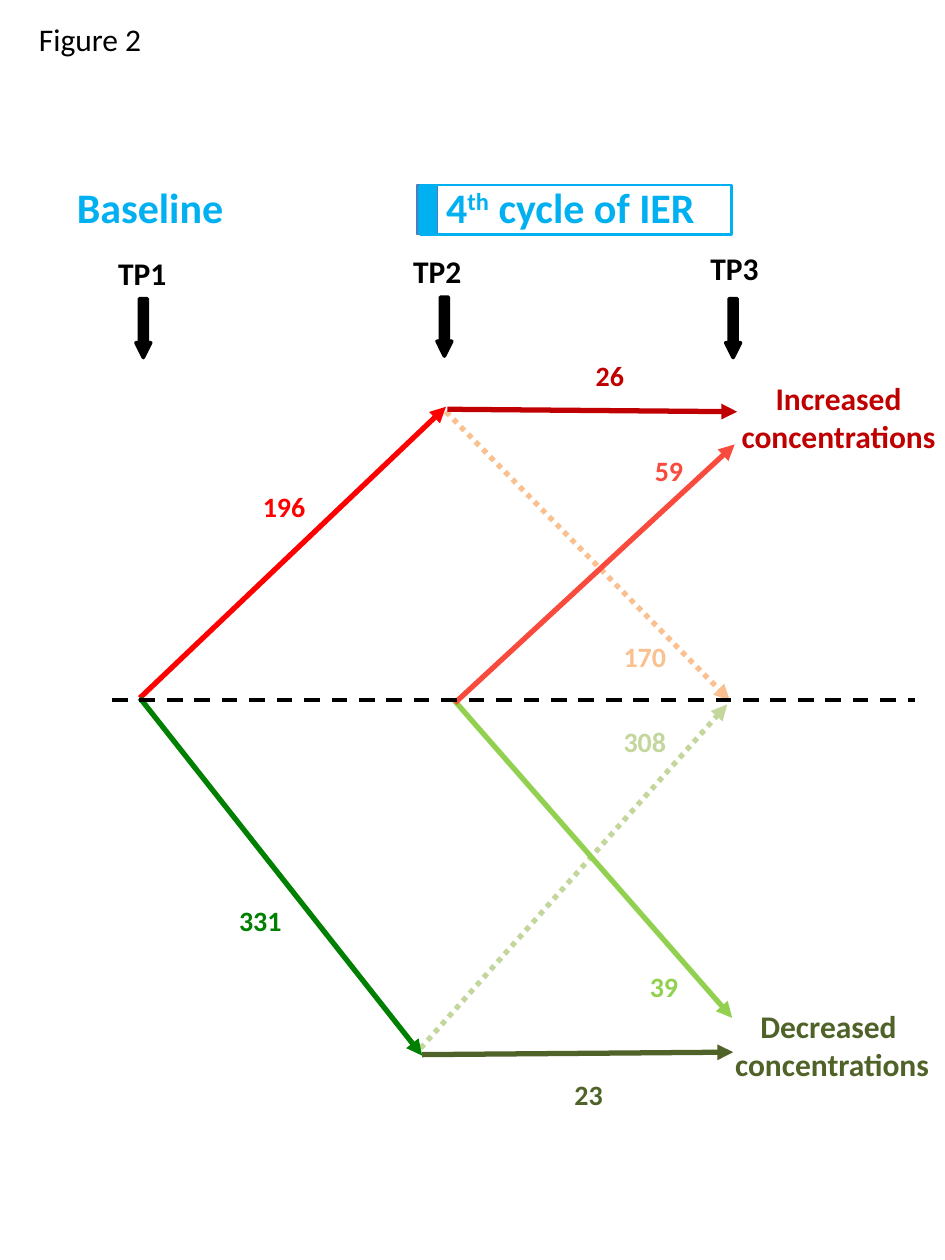
from collections import namedtuple

from lxml import etree
from pptx import Presentation
from pptx.dml.color import RGBColor
from pptx.enum import dml, shapes, text
from pptx.oxml import ns
from pptx.util import Cm, Pt

Box = namedtuple("Box", "left top")  # region origin, in cm
FONT = "Calibri"
COLORS = {
    "black": "000000",
    "sky": "00B0F0",
    "blue": "4B7EBC",
    "red": "FF0000",
    "dark red": "C00000",
    "coral": "F84B3E",
    "peach": "FAC090",
    "green": "008000",
    "olive": "4F6228",
    "lime": "92D050",
    "sage": "C3D69B",
}


def rgb(color):
    return RGBColor.from_string(COLORS[color])


def style_font(font, size, color, bold=True):
    font.name, font.size, font.bold = FONT, Pt(size), bold
    font.color.rgb = rgb(color)


def add_label(slide, box, x, y, width, height, lines, size, color,
              centred=False, wrap=False):
    label = slide.shapes.add_textbox(
        Cm(box.left + x), Cm(box.top + y), Cm(width), Cm(height))
    frame = label.text_frame
    frame.word_wrap = wrap
    frame.auto_size = text.MSO_AUTO_SIZE.SHAPE_TO_FIT_TEXT
    frame.text = lines
    for paragraph in frame.paragraphs:
        style_font(paragraph.font, size, color)
        if centred:
            paragraph.alignment = text.PP_ALIGN.CENTER
    return frame


def add_line(slide, box, start, end, color, width, dash=None, arrow=False):
    line = slide.shapes.add_connector(
        shapes.MSO_CONNECTOR.STRAIGHT,
        Cm(box.left + start[0]), Cm(box.top + start[1]),
        Cm(box.left + end[0]), Cm(box.top + end[1]))
    line.line.color.rgb = rgb(color)
    line.line.width = Pt(width)
    if dash:
        line.line.dash_style = dash
    if arrow:
        outline = line.line._get_or_add_ln()
        etree.SubElement(outline, ns.qn("a:tailEnd"), type="triangle")
    etree.SubElement(line._element.spPr, ns.qn("a:effectLst"))


def add_frame(slide, box, x, width, color, line_width, fill=None):
    frame = slide.shapes.add_shape(
        shapes.MSO_SHAPE.RECTANGLE,
        Cm(box.left + x), Cm(box.top + 0.2), Cm(width), Cm(1))
    frame.shadow.inherit = False
    frame.line.color.rgb = rgb(color)
    frame.line.width = Pt(line_width)
    if fill:
        frame.fill.solid()
        frame.fill.fore_color.rgb = rgb(fill)
    else:
        frame.fill.background()


def add_down_arrow(slide, box, x, y):
    outline = [(0, 0.89), (0.07, 0.89), (0.07, 0), (0.23, 0),
               (0.23, 0.89), (0.3, 0.89), (0.15, 1.19)]
    points = [(Cm(box.left + x + dx), Cm(box.top + y + dy))
              for dx, dy in outline]
    builder = slide.shapes.build_freeform(*points[0])
    builder.add_line_segments(points[1:], close=True)
    arrow = builder.convert_to_shape()
    arrow.shadow.inherit = False
    arrow.fill.solid()
    arrow.fill.fore_color.rgb = rgb("black")
    arrow.line.color.rgb = rgb("black")
    arrow.line.width = Pt(2)


def build_caption(slide, box):
    caption = slide.shapes.title
    caption.left, caption.top = Cm(box.left), Cm(box.top)
    caption.width, caption.height = Cm(2.74), Cm(1.02)
    frame = caption.text_frame
    frame.text = "Figure 2"
    frame.word_wrap = False
    frame.auto_size = text.MSO_AUTO_SIZE.NONE
    frame.vertical_anchor = text.MSO_ANCHOR.TOP
    frame.paragraphs[0].alignment = text.PP_ALIGN.LEFT
    style_font(frame.paragraphs[0].font, 18, "black", bold=False)


def build_phases(slide, box):
    add_label(slide, box, 0, 0, 3.6, 1.27, "Baseline", 24, "sky", wrap=True)
    cycle = add_label(slide, box, 6.7, 0, 7.42, 1.27, "4", 24, "sky",
                      centred=True, wrap=True)
    cycle.margin_right = Cm(0.67)
    ordinal = cycle.paragraphs[0].add_run()
    ordinal.text = "th"
    ordinal._r.get_or_add_rPr().set("baseline", "30000")
    cycle.paragraphs[0].add_run().text = " cycle of IER"
    # Marker bar at the start of the framed cycle
    add_frame(slide, box, 7.11, 0.41, "blue", 0.75, fill="sky")
    add_frame(slide, box, 7.18, 6.27, "sky", 1.5)


def build_time_points(slide, box):
    # name, label x and y, arrow x and y
    for name, label_x, label_y, arrow_x, arrow_y in [
            ("TP1", 0, 0.1, 0.61, 1.12),
            ("TP2", 5.95, 0.05, 6.68, 1.09),
            ("TP3", 11.94, 0, 12.5, 1.12)]:
        add_label(slide, box, label_x, label_y, 1.65, 1.02, name, 18, "black")
        add_down_arrow(slide, box, arrow_x, arrow_y)


def build_flow(slide, box):
    dotted = dml.MSO_LINE.ROUND_DOT
    # count, colour, arrow start, arrow end, dash, label position, label width
    flows = [
        ("308", "sage", (6.22, 14.02), (12.4, 7.09), dotted, (10.06, 7.37), 1.37),
        ("170", "peach", (6.73, 1.19), (12.45, 7.01), dotted, (10.06, 5.66), 1.37),
        ("39", "lime", (6.88, 6.99), (12.5, 13.41), None, (10.59, 12.32), 2.21),
        ("59", "coral", (6.91, 7.06), (12.55, 1.85), None, (10.69, 1.9), 1.09),
        ("196", "red", (0.56, 6.96), (6.73, 1.09), None, (2.79, 2.64), 1.37),
        ("331", "green", (0.56, 6.96), (6.25, 14.17), None, (2.31, 10.97), 1.37),
        ("26", "dark red", (6.76, 1.14), (12.6, 1.19), None, (9.5, 0), 1.09),
        ("23", "olive", (6.25, 14.15), (12.52, 14.1), None, (9.07, 14.48), 2.21),
    ]
    for count, color, start, end, dash, (x, y), width in flows:
        add_line(slide, box, start, end, color, 3, dash, arrow=True)
        add_label(slide, box, x, y, width, 0.94, count, 16, color)

    # Outcomes at the right
    for lines, color, x, y in [
            ("Increased\nconcentrations", "dark red", 12.42, 0.41),
            ("Decreased \nconcentrations", "olive", 12.29, 13.06)]:
        add_label(slide, box, x, y, 4.45, 2.57, lines, 18, color, centred=True)

    # Baseline level
    add_line(slide, box, (0, 7.01), (16.18, 7.01), "black", 2.25,
             dml.MSO_LINE.DASH)


def main():
    deck = Presentation()
    deck.slide_width, deck.slide_height = Cm(19.05), Cm(25.4)
    slide = deck.slides.add_slide(deck.slide_layouts.get_by_name("Title Only"))
    build_caption(slide, Box(0.53, 0.28))
    build_phases(slide, Box(1.3, 3.53))
    build_time_points(slide, Box(2.13, 4.9))
    build_flow(slide, Box(2.26, 7.11))
    deck.save("out.pptx")


if __name__ == "__main__":
    main()
